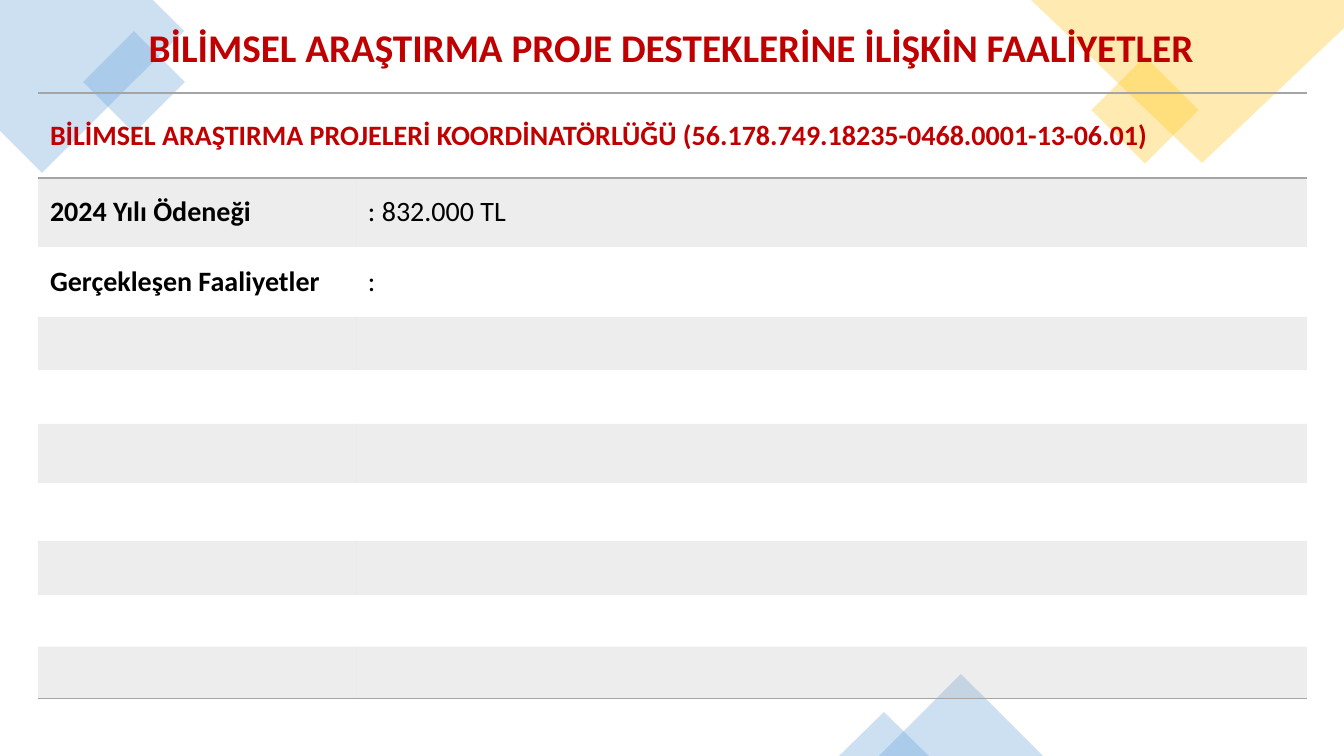
"""Build the slide on activities funded by research project grants."""
from lxml import etree
from pptx import Presentation
from pptx import util as u
from pptx.dml.color import RGBColor
from pptx.enum import shapes, text
from pptx.oxml.ns import qn

PX = 12192000 / 1344
RED, BLUE, GOLD, GRAY, BLACK = "C00000", "5B9BD5", "FFC000", "A5A5A5", "000000"
FONT = "Calibri"
PLAIN = "{2D5ABB26-0587-4C30-8999-92F81FD0307C}"

TITLE = "BİLİMSEL ARAŞTIRMA PROJE DESTEKLERİNE İLİŞKİN FAALİYETLER"
TITLE_BOX = (115, 20, 1112, 60)
HEAD = "BİLİMSEL ARAŞTIRMA PROJELERİ KOORDİNATÖRLÜĞÜ (56.178.749.18235-0468.0001-13-06.01)"
ROWS = [
    (HEAD, ""),
    ("2024 Yılı Ödeneği", ": 832.000 TL"),
    ("Gerçekleşen Faaliyetler", ":"),
]
LEFT, TOP = 38, 93
COLS = [318, 951]
TALL = [85, 69, 70, 53, 54, 59, 58, 54, 52, 52]

CORNERS = [
    (BLUE, [(0, 0), (153, 0), (184, 31), (42, 173), (0, 131)]),
    (GOLD, [(1031, 0), (1344, 0), (1344, 28), (1202, 163)]),
]
RECT, TRI = shapes.MSO_SHAPE.RECTANGLE, shapes.MSO_SHAPE.ISOSCELES_TRIANGLE
TILES = [
    (RECT, BLUE, (98, 46, 72, 72), 45),
    (RECT, GOLD, (1107, 72, 76, 76), 45),
    (TRI, BLUE, (879, 674, 164, 82), 0),
    (TRI, BLUE, (839, 712, 90, 44), 0),
]


def emu(*vals):
    return [u.Emu(round(v * PX)) for v in vals]


def rgb(code):
    return RGBColor.from_string(code)


def tint(fill, code, share, node):
    fill.solid()
    fill.fore_color.rgb = rgb(code)
    color = next(node.iter(qn("a:srgbClr")))
    etree.SubElement(color, qn("a:alpha"), val=str(share * 1000))


def style(run, size, code, bold):
    for key, val in {"name": FONT, "size": u.Pt(size), "bold": bold}.items():
        setattr(run.font, key, val)
    run.font.color.rgb = rgb(code)


def finish(shape, code):
    shape.shadow.inherit = False
    shape.line.fill.background()
    tint(shape.fill, code, 30, shape._element.spPr)


def rule(cell, sides):
    props = cell._tc.get_or_add_tcPr()
    for spot, side in enumerate(sides):
        line = etree.Element(qn("a:ln" + side), w="12700")
        fill = etree.SubElement(line, qn("a:solidFill"))
        etree.SubElement(fill, qn("a:srgbClr"), val=GRAY)
        props.insert(spot, line)


def decorate(slide):
    for code, points in CORNERS:
        spots = [tuple(emu(*point)) for point in points]
        form = slide.shapes.build_freeform(*spots[0])
        form.add_line_segments(spots[1:])
        finish(form.convert_to_shape(), code)
    for kind, code, box, turn in TILES:
        tile = slide.shapes.add_shape(kind, *emu(*box))
        tile.rotation = turn
        finish(tile, code)


def write(cell, words, size, code, bold):
    margins = emu(12, 6, 12, 6)
    for side, gap in zip(("left", "top", "right", "bottom"), margins):
        setattr(cell, "margin_" + side, gap)
    cell.vertical_anchor = text.MSO_ANCHOR.MIDDLE
    run = cell.text_frame.paragraphs[0].add_run()
    run.text = words
    style(run, size, code, bold)


def tabulate(slide):
    box = emu(LEFT, TOP, sum(COLS), sum(TALL))
    table = slide.shapes.add_table(len(TALL), len(COLS), *box).table
    table._tbl.tblPr.find(qn("a:tableStyleId")).text = PLAIN
    for col, wide in zip(table.columns, emu(*COLS)):
        col.width = wide
    for row, high in zip(table.rows, emu(*TALL)):
        row.height = high
    table.cell(0, 0).merge(table.cell(0, 1))
    edges = {0: "TB", len(TALL) - 1: "B"}
    for r, row in enumerate(table.rows):
        for c, cell in enumerate(row.cells):
            words = ROWS[r][c] if r < len(ROWS) else ""
            if words:
                write(cell, words, 20, BLACK if r else RED, c == 0)
            if r % 2:
                tint(cell.fill, GRAY, 20, cell._tc.get_or_add_tcPr())
            rule(cell, edges.get(r, ""))


def head(slide):
    title = slide.shapes.title
    for key, val in zip(("left", "top", "width", "height"), emu(*TITLE_BOX)):
        setattr(title, key, val)
    frame = title.text_frame
    frame.word_wrap = True
    frame.vertical_anchor = text.MSO_ANCHOR.MIDDLE
    para = frame.paragraphs[0]
    para.alignment = text.PP_ALIGN.CENTER
    para.line_spacing = 0.9
    run = para.add_run()
    run.text = TITLE
    style(run, 28, RED, True)
    slide.shapes._spTree.append(title._element)


def main():
    deck = Presentation()
    deck.slide_width, deck.slide_height = emu(1344, 756)
    slide = deck.slides.add_slide(deck.slide_layouts[5])
    decorate(slide)
    tabulate(slide)
    head(slide)
    deck.save("out.pptx")


if __name__ == "__main__":
    main()
